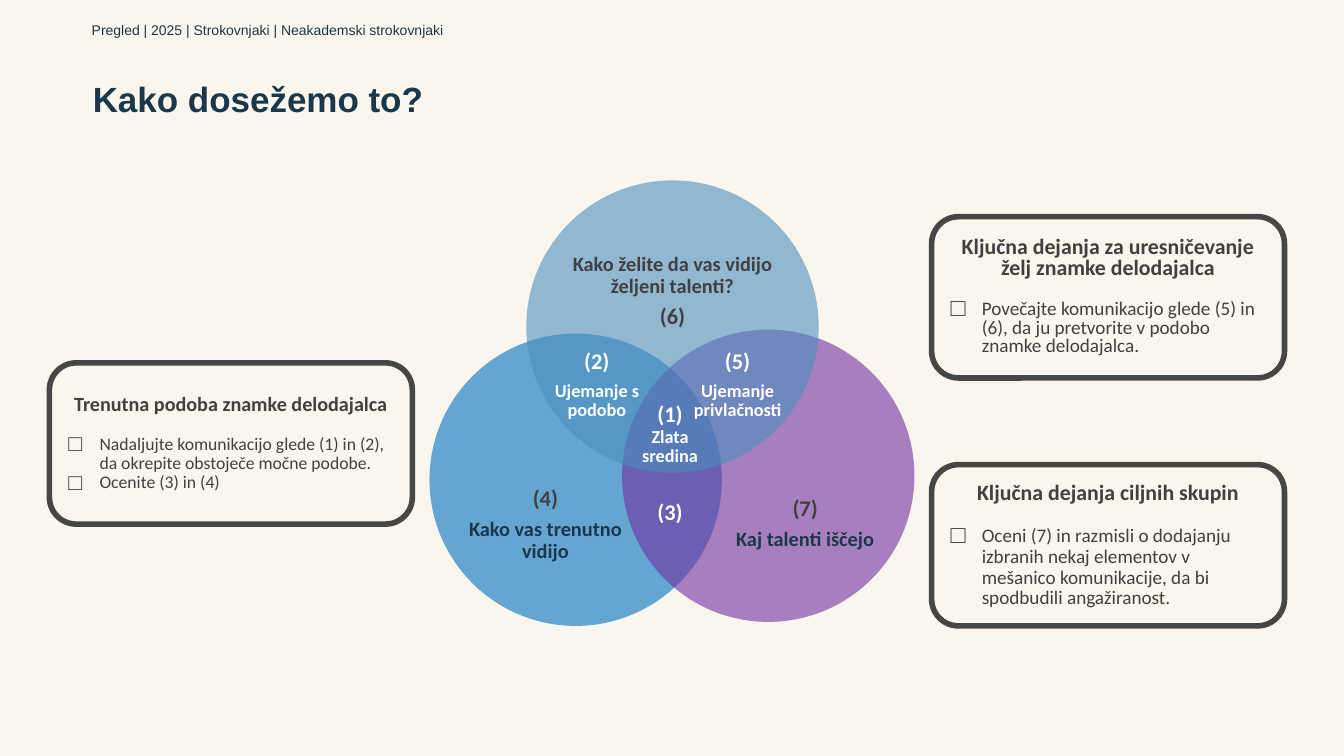
from pptx import Presentation
from pptx.dml.color import RGBColor
from pptx.enum.shapes import MSO_SHAPE as Shape
from pptx.enum.text import MSO_ANCHOR as Anchor, MSO_AUTO_SIZE as AutoSize, PP_ALIGN as Align
from pptx.oxml.ns import qn
from pptx.util import Inches, Pt
from lxml.etree import SubElement

NAVY, GREY, WHITE, CREAM = "1B374A", "414041", "FFFFFF", "FAF6ED"


def rgb(value):
    return RGBColor.from_string(value)


class VennSlide:
    """Places styled elements on one slide, on a grid of tenth-inch cells."""

    cell = Inches(0.1)
    diameter = 29
    card_height = 16

    def __init__(self, deck):
        self.slide = deck.slides.add_slide(deck.slide_layouts[1])
        self.slide.background.fill.solid()
        self.slide.background.fill.fore_color.rgb = rgb(CREAM)

    def area(self, *cells):
        return [round(count * self.cell) for count in cells]

    def see_through(self, shape, percent):
        for colour in shape.element.spPr.iter(qn("a:srgbClr")):
            SubElement(colour, qn("a:alpha")).set("val", str(percent * 1000))

    def bullet(self, paragraph, mark=None):
        properties = paragraph._p.get_or_add_pPr()
        indent = Inches(0.31) if mark else 0
        properties.set("marL", str(indent))
        properties.set("indent", str(-indent))
        if mark:
            SubElement(properties, qn("a:buSzPct")).set("val", "130000")
            SubElement(properties, qn("a:buFont")).set("typeface", "Arial")
            SubElement(properties, qn("a:buChar")).set("char", mark)
        else:
            SubElement(properties, qn("a:buNone"))

    def style(self, paragraph, size, colour, bold=True, font="Calibri",
              align=Align.CENTER, spacing=0.9, after=0):
        paragraph.alignment = align
        paragraph.line_spacing = spacing
        paragraph.space_before = Pt(0)
        paragraph.space_after = Pt(after)
        for run in paragraph.runs:
            run.font.size = Pt(size)
            run.font.name = font
            run.font.bold = bold
            run.font.color.rgb = rgb(colour)

    def heading(self, index, text, cells, size, bold, inset=0):
        holder = self.slide.placeholders[index]
        holder.left, holder.top, holder.width, holder.height = self.area(*cells)
        frame = holder.text_frame
        frame.text = text
        frame.auto_size = AutoSize.NONE
        frame.vertical_anchor = Anchor.MIDDLE
        frame.margin_left = Inches(inset)
        frame.margin_top = frame.margin_right = frame.margin_bottom = 0
        self.bullet(frame.paragraphs[0])
        self.style(frame.paragraphs[0], size, NAVY, bold, "Arial", Align.LEFT)

    def circle(self, left, top, colour):
        disc = self.slide.shapes.add_shape(
            Shape.FLOWCHART_CONNECTOR, *self.area(left, top, self.diameter, self.diameter))
        disc.shadow.inherit = False
        disc.fill.solid()
        disc.fill.fore_color.rgb = rgb(colour)
        disc.line.fill.background()
        self.see_through(disc, 60)

    def label(self, cells, lines):
        frame = self.slide.shapes.add_textbox(*self.area(*cells)).text_frame
        frame.word_wrap = True
        frame.auto_size = AutoSize.SHAPE_TO_FIT_TEXT
        frame.text = "\n".join(text for text, *_ in lines)
        for paragraph, (_, size, colour, *after) in zip(frame.paragraphs, lines):
            self.style(paragraph, size, colour, after=after[0] if after else 5.4)

    def card(self, left, top, width, title, actions, sizes, gap, spacing=0.9):
        box = self.slide.shapes.add_shape(
            Shape.ROUNDED_RECTANGLE, *self.area(left, top, width, self.card_height))
        box.shadow.inherit = False
        box.fill.background()
        box.line.color.rgb = rgb("333333")
        box.line.width = Pt(4)
        self.see_through(box, 90)
        frame = box.text_frame
        frame.word_wrap = True
        frame.vertical_anchor = Anchor.MIDDLE
        frame.margin_left = frame.margin_right = Inches(0.11)
        frame.text = "\n".join([title, *actions])
        first, *rest = frame.paragraphs
        self.style(first, sizes[0], GREY, spacing=spacing, after=gap)
        for paragraph in rest:
            self.bullet(paragraph, "□")
            self.style(paragraph, sizes[1], GREY, False, align=Align.LEFT, spacing=spacing)


def main():
    deck = Presentation()
    deck.slide_width, deck.slide_height = Inches(13.33), Inches(7.5)
    venn = VennSlide(deck)

    venn.heading(0, "Kako dosežemo to?", (9.2, 6.1, 115, 7.9), 25, True)
    venn.heading(1, "Pregled | 2025 | Strokovnjaki | Neakademski strokovnjaki",
                 (0, 0, 133.3, 6.1), 10, False, 0.91)

    for left, top, colour in ((42.6, 33.1, "0070C0"), (61.7, 32.7, "7030A0"),
                              (52.2, 17.9, "4B8FBD")):
        venn.circle(left, top, colour)

    labels = (
        ((53.9, 34.2, 10.6, 8.1), [("(2)", 16, WHITE), ("Ujemanje s podobo", 13, WHITE)]),
        ((67.2, 34.2, 11.9, 8.1), [("(5)", 16, WHITE), ("Ujemanje privlačnosti", 13, WHITE)]),
        ((62.5, 39.5, 7.9, 16.3), [("(1)", 16, WHITE, 0), ("Zlata sredina", 13, WHITE, 25),
                                   ("(3)", 16, WHITE)]),
        ((70.4, 48.8, 18.9, 6.3), [("(7)", 16, GREY), ("Kaj talenti iščejo", 14.5, NAVY)]),
        ((44.3, 47.8, 19.6, 8.8), [("(4)", 16, GREY), ("Kako vas trenutno vidijo", 14.5, NAVY)]),
        ((55, 24.7, 23.4, 8.8), [("Kako želite da vas vidijo željeni talenti?", 14.5, GREY),
                                 ("(6)", 16, GREY)]),
    )
    for cells, lines in labels:
        venn.label(cells, lines)

    venn.card(4.9, 36, 36, "Trenutna podoba znamke delodajalca",
              ["Nadaljujte komunikacijo glede (1) in (2), da okrepite obstoječe močne podobe.",
               "Ocenite (3) in (4)"], (14.4, 12.6), 14)
    venn.card(92.4, 21.5, 35, "Ključna dejanja za uresničevanje želj znamke delodajalca",
              ["Povečajte komunikacijo glede (5) in (6), da ju pretvorite v podobo "
               "znamke delodajalca."], (15.6, 13.7), 15, 0.8)
    venn.card(92.4, 46.1, 35, "Ključna dejanja ciljnih skupin",
              ["Oceni (7) in razmisli o dodajanju izbranih nekaj elementov v mešanico "
               "komunikacije, da bi spodbudili angažiranost."], (15.6, 13.7), 15)

    deck.save("out.pptx")


if __name__ == "__main__":
    main()
